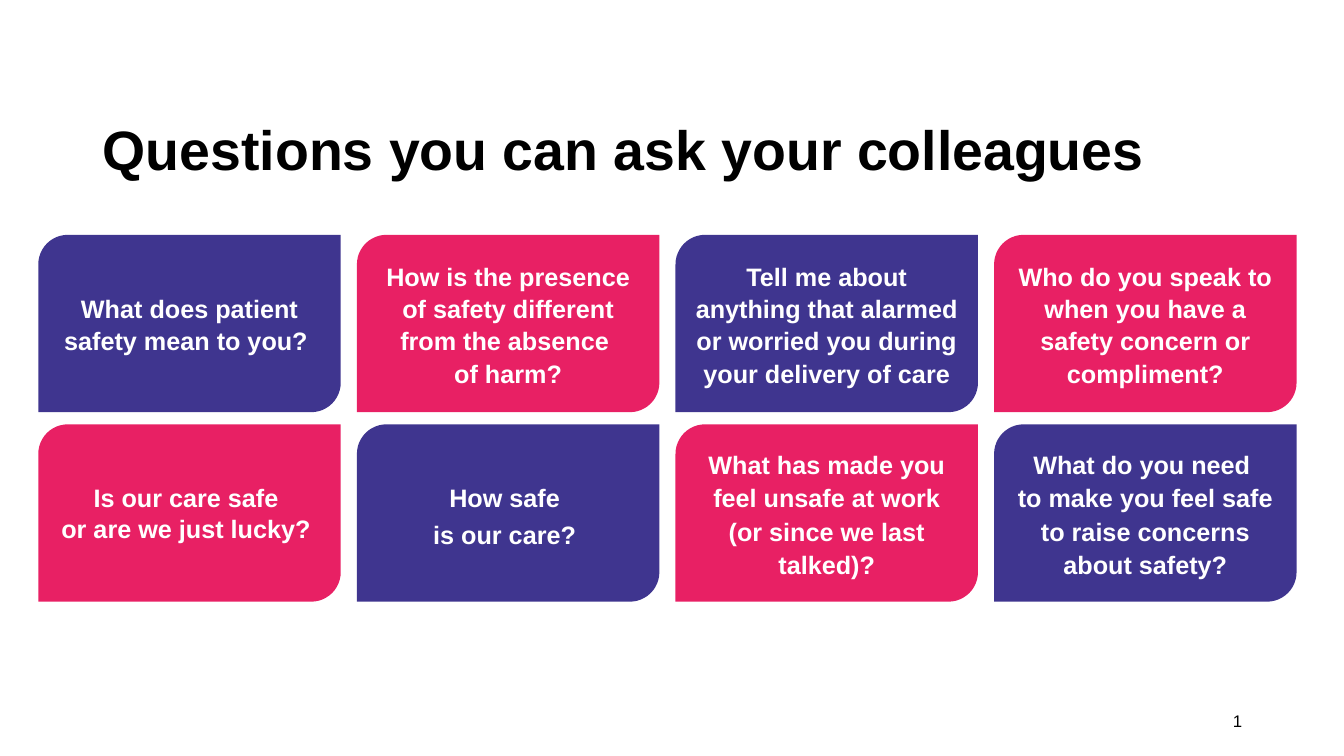
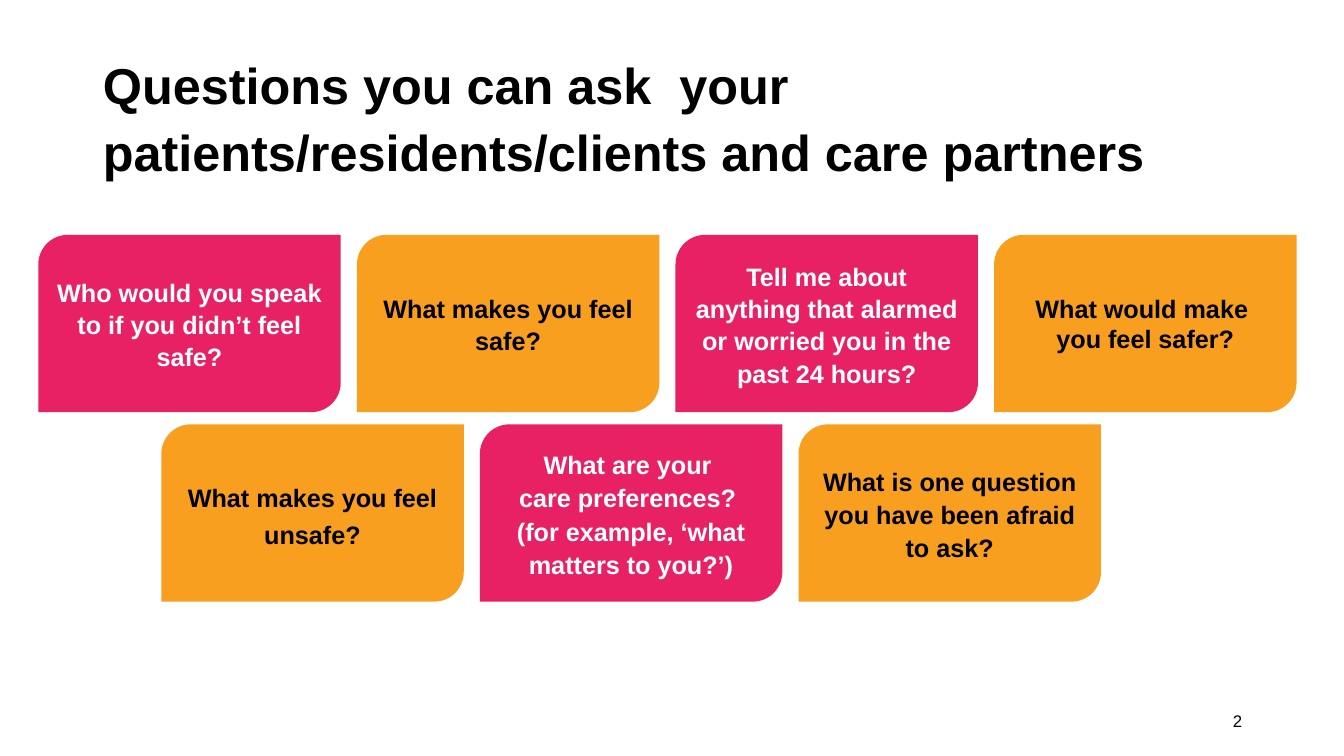
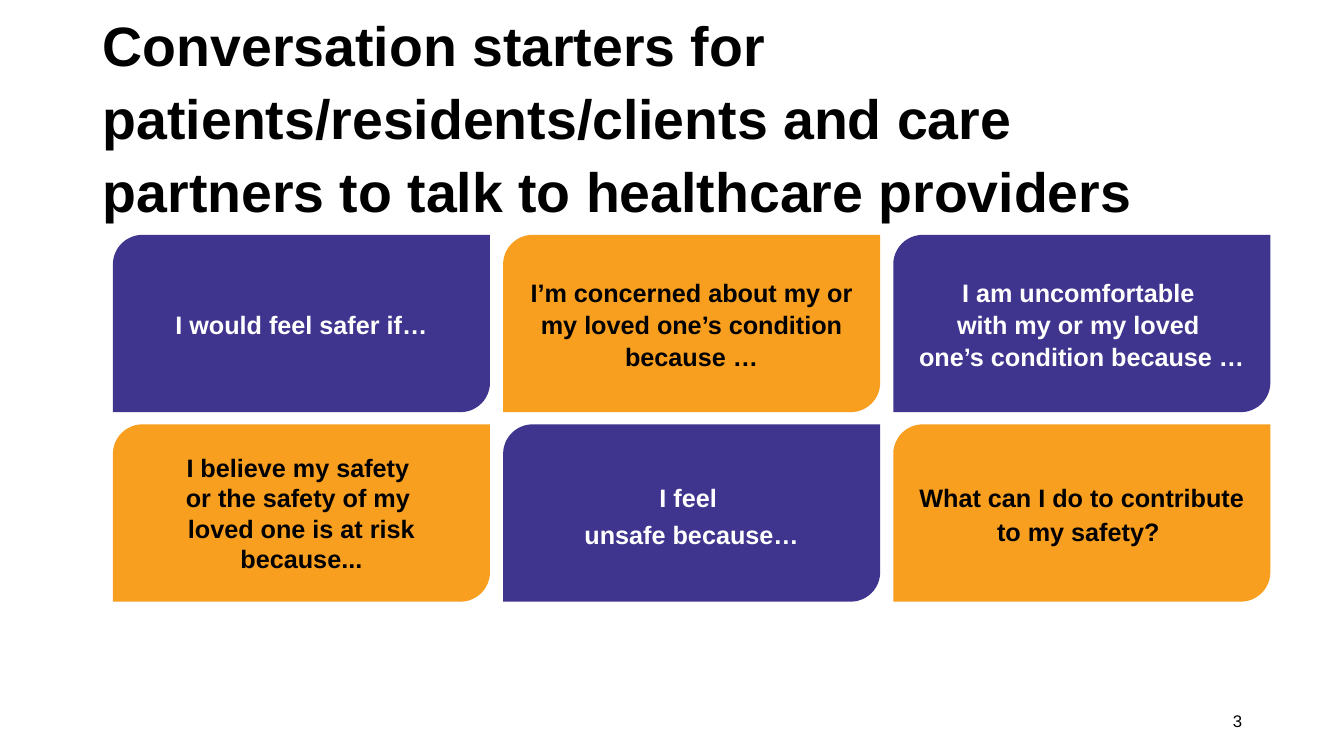
from copy import deepcopy

from pptx import Presentation
from pptx.dml.color import RGBColor
from pptx.enum.shapes import MSO_SHAPE
from pptx.enum.text import MSO_ANCHOR, MSO_AUTO_SIZE, PP_ALIGN
from pptx.oxml.ns import qn
from pptx.util import Inches, Pt

CARD_SHAPE = MSO_SHAPE.ROUND_2_DIAG_RECTANGLE
MIDDLE, BOTTOM = MSO_ANCHOR.MIDDLE, MSO_ANCHOR.BOTTOM
LEFT, CENTER, RIGHT = PP_ALIGN.LEFT, PP_ALIGN.CENTER, PP_ALIGN.RIGHT
NO_FIT = MSO_AUTO_SIZE.NONE

PURPLE, PINK, ORANGE = "3F358F", "E82064", "F99F20"
BLACK, WHITE = "000000", "FFFFFF"

CARD_TOP, CARD_HEIGHT, ROW_GAP = 2.33, 1.76, 0.12

DECK = [
    {
        "title": "Questions you can ask your colleagues",
        "title_top": 0.4,
        "title_size": 39.6,
        "colours": (PURPLE, PINK),
        "card_width": 3,
        "column_gap": 0.16,
        "rows": [
            (0.38, [
                ("What does patient safety mean to you? ", 1.07),
                ("How is the presence of safety different from the absence \vof harm?", 1.07),
                ("Tell me about anything that alarmed or worried you during your delivery of care", 1.07),
                ("Who do you speak to when you have a safety concern or compliment?", 1.07),
            ]),
            (0.38, [
                ("Is our care safe \vor are we just lucky? ", 1.0),
                ("How safe \vis our care? ", 1.2),
                ("What has made you feel unsafe at work (or since we last talked)?", 1.1),
                ("What do you need \vto make you feel safe to raise concerns about safety?", 1.1),
            ]),
        ],
    },
    {
        "title": "Questions you can ask  your patients/residents/clients and care partners",
        "title_top": 0.4,
        "title_size": 36,
        "colours": (PINK, ORANGE),
        "card_width": 3,
        "column_gap": 0.16,
        "rows": [
            (0.38, [
                ("Who would you speak to if you didn’t feel safe?", 1.07),
                ("What makes you feel safe?", 1.07),
                ("Tell me about anything that alarmed or worried you in the past 24 hours?", 1.07),
                ("What would make \vyou feel safer?", 1.0),
            ]),
            (1.6, [
                ("What makes you feel unsafe?", 1.2),
                ("What are your \vcare preferences? \v(for example, ‘what matters to you?’)", 1.1),
                ("What is one question you have been afraid to ask?", 1.1),
            ]),
        ],
    },
    {
        "title": "Conversation starters for \vpatients/residents/clients and care partners "
                 "to talk to healthcare providers",
        "title_top": 0.82,
        "title_size": 39.6,
        "colours": (PURPLE, ORANGE),
        "card_width": 3.74,
        "column_gap": 0.13,
        "rows": [
            (1.12, [
                ("I would feel safer if…", 1.07),
                (" I’m concerned about my or \nmy loved one’s condition because …", 1.07),
                ("I am uncomfortable \vwith my or my loved \vone’s condition because …", 1.07),
            ]),
            (1.12, [
                ("I believe my safety \vor the safety of my \vloved one is at risk because...", 1.0),
                ("I feel \vunsafe because…", 1.2),
                ("What can I do to contribute to my safety? ", 1.1),
            ]),
        ],
    },
]


def rgb(colour):
    return RGBColor.from_string(colour)


def apply_format(target, values):
    for name, value in values.items():
        setattr(target, name, value)


class Deck:
    font = "Arial"

    def __init__(self):
        self.presentation = Presentation()
        apply_format(self.presentation,
                     {"slide_width": Inches(13.33), "slide_height": Inches(7.5)})
        self.slide = None

    def new_slide(self):
        layout = self.presentation.slide_layouts.get_by_name("Title Only")
        self.slide = self.presentation.slides.add_slide(layout)

    def set_text(self, holder, text, size, colour, bold, anchor, layout):
        frame = holder.text_frame
        apply_format(frame, {"text": text, "word_wrap": True, "auto_size": NO_FIT,
                             "vertical_anchor": anchor})
        for paragraph in frame.paragraphs:
            apply_format(paragraph, layout)
            for run in paragraph.runs:
                apply_format(run.font, {"name": self.font, "size": Pt(size), "bold": bold})
                run.font.color.rgb = rgb(colour)
            for line_break in paragraph._p.findall(qn("a:br")):
                line_break.append(deepcopy(paragraph.runs[0]._r.rPr))

    def title(self, text, top, size):
        heading = self.slide.shapes.title
        apply_format(heading, {"left": Inches(0.92), "top": Inches(top),
                               "width": Inches(11.5), "height": Inches(1.45)})
        self.set_text(heading, text, size, BLACK, True, BOTTOM,
                      {"alignment": LEFT, "line_spacing": 1.1})

    def card(self, left, top, width, fill, text, spacing):
        card = self.slide.shapes.add_shape(
            CARD_SHAPE, Inches(left), Inches(top), Inches(width), Inches(CARD_HEIGHT))
        card.shadow.inherit = False
        card.fill.solid()
        card.fill.fore_color.rgb = rgb(fill)
        card.line.fill.background()
        self.set_text(card, text, 18, BLACK if fill == ORANGE else WHITE, True, MIDDLE,
                      {"alignment": CENTER, "line_spacing": spacing})

    def cards(self, rows, width, gap, colours):
        for row, (left, questions) in enumerate(rows):
            top = CARD_TOP + row * (CARD_HEIGHT + ROW_GAP)
            for column, (question, spacing) in enumerate(questions):
                self.card(left + column * (width + gap), top, width,
                          colours[(row + column) % 2], question, spacing)

    def page_number(self):
        number = self.slide.shapes.add_textbox(
            Inches(9.42), Inches(6.95), Inches(3), Inches(0.4))
        self.set_text(number, str(len(self.presentation.slides)), 12, BLACK, False, MIDDLE,
                      {"alignment": RIGHT, "space_after": Pt(6)})


def main():
    deck = Deck()
    for content in DECK:
        deck.new_slide()
        deck.title(content["title"], content["title_top"], content["title_size"])
        deck.cards(content["rows"], content["card_width"], content["column_gap"],
                   content["colours"])
        deck.page_number()
    deck.presentation.save("out.pptx")


if __name__ == "__main__":
    main()
